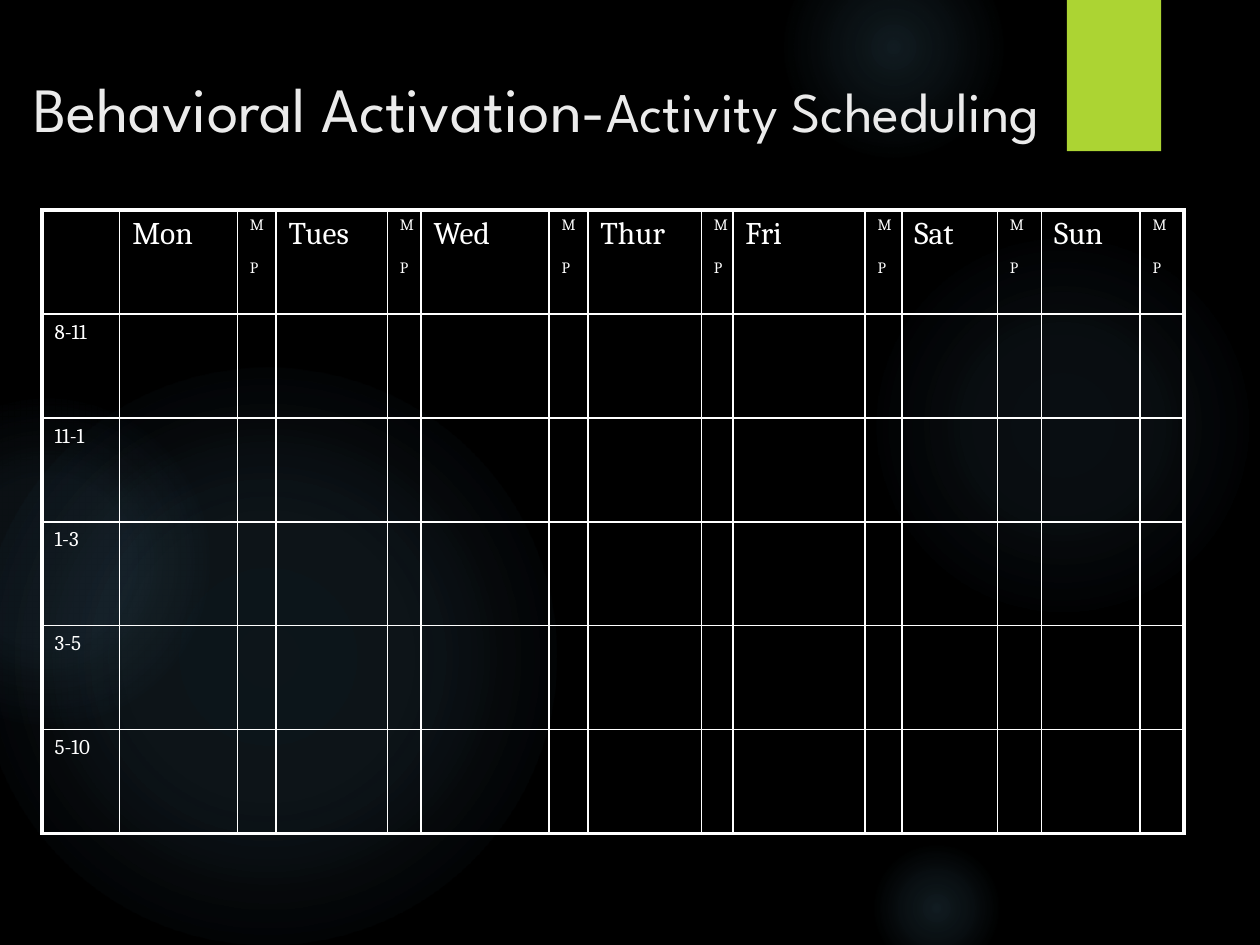
from pptx import Presentation
from pptx.dml.color import RGBColor
from pptx.enum.shapes import MSO_SHAPE
from pptx.enum.text import MSO_ANCHOR
from pptx.oxml import parse_xml
from pptx.oxml.ns import nsdecls, qn
from pptx.util import Inches, Pt

BLACK = RGBColor(0x00, 0x00, 0x00)
WHITE = RGBColor(0xFF, 0xFF, 0xFF)
PALE = RGBColor(0xEB, 0xEB, 0xEB)
LIME = RGBColor(0xAC, 0xD4, 0x33)
SKY = RGBColor(0x7A, 0xC4, 0xF0)

UNIT = Inches(1) / 12
PAGE_COLUMNS, PAGE_ROWS = 120, 90

GLOWS = [
    ((82.7, 22, 37, 37), [(0, 7), (36, 6), (69, 0)]),
    ((74.6, -6, 21, 21), [(0, 14), (36, 7), (73, 0)]),
    ((82.7, 80, 13, 13), [(0, 14), (36, 7), (66, 0)]),
    ((-2, 35, 55, 55), [(0, 11), (36, 10), (75, 0)]),
    ((-11, 38, 31, 31), [(0, 8), (36, 8), (72, 0)]),
]
DAYS = ["Mon", "Tues", "Wed", "Thur", "Fri", "Sat", "Sun"]
HOURS = ["8-11", "11-1", "1-3", "3-5", "5-10"]
HOUR_COLUMN = 7.4
DAY_COLUMNS = [11.2, 10.6, 12.2, 10.8, 12.6, 9.1, 9.4]
RATING_COLUMNS = [3.7, 3.2, 3.7, 3.0, 3.5, 4.2, 4.2]
TABLE_ROW = 9.9
THICK, THIN = 2.25, 1

DAY_FORMAT = {"name": "Cambria", "size": Pt(18)}
RATING_FORMAT = {"name": "Cambria", "size": Pt(9)}
HOUR_FORMAT = {"name": "Cambria", "size": Pt(12)}


def grid(*counts):
    """Turn counts of grid columns or rows into lengths."""
    return [round(count * UNIT) for count in counts]


def format_font(font, color, values):
    """Give a font its colour and the attributes listed in values."""
    font.color.rgb = color
    for name, value in values.items():
        setattr(font, name, value)


def add_plain_shape(page, kind, box):
    """Add a preset shape without outline or shadow."""
    shape = page.shapes.add_shape(kind, *grid(*box))
    shape.shadow.inherit = False
    shape.line.fill.background()
    return shape


def add_glow(page, box, stops):
    """Add a circle that fades from its centre outwards."""
    shape = add_plain_shape(page, MSO_SHAPE.OVAL, box)
    shape.fill.background()
    stop_list = "".join(
        f'<a:gs pos="{place * 1000}"><a:srgbClr val="{SKY}">'
        f'<a:alpha val="{opacity * 1000}"/></a:srgbClr></a:gs>'
        for place, opacity in stops
    )
    gradient = parse_xml(
        f'<a:gradFill {nsdecls("a")} rotWithShape="1"><a:gsLst>{stop_list}</a:gsLst>'
        '<a:path path="circle"><a:fillToRect l="50000" t="50000" r="50000" b="50000"/>'
        "</a:path></a:gradFill>"
    )
    properties = shape._element.spPr
    properties.replace(properties.find(qn("a:noFill")), gradient)


def add_tab(page, box):
    """Add the lime tab with its soft shadow at the top edge."""
    shape = add_plain_shape(page, MSO_SHAPE.RECTANGLE, box)
    shape.fill.solid()
    shape.fill.fore_color.rgb = LIME
    shape._element.spPr.find(qn("a:effectLst")).append(parse_xml(
        f'<a:outerShdw {nsdecls("a")} blurRad="{Pt(3)}" dist="{Pt(2)}" dir="5400000">'
        f'<a:srgbClr val="{BLACK}"><a:alpha val="45000"/></a:srgbClr></a:outerShdw>'
    ))


def add_title(page, box):
    """Add the heading, whose second part is set smaller."""
    frame = page.shapes.add_textbox(*grid(*box)).text_frame
    frame.word_wrap = True
    frame.vertical_anchor = MSO_ANCHOR.TOP
    para = frame.paragraphs[0]
    for text, size in [("Behavioral Activation-", 36), ("Activity Scheduling", 32)]:
        span = para.add_run()
        span.text = text
        format_font(span.font, PALE, {"name": "League Spartan", "size": Pt(size)})


def write_cell(cell, lines, values, gap=None):
    """Write one paragraph per line, with a gap before all but the first."""
    frame = cell.text_frame
    frame.text = "\n".join(lines)
    for index, para in enumerate(frame.paragraphs):
        para.space_before = gap if index and gap else round(values["size"] * 0.2)
        format_font(para.runs[0].font, WHITE, values)


def draw_borders(cell, widths):
    """Draw the cell's white borders from a dict of side and width."""
    cell.fill.background()
    properties = cell._tc.get_or_add_tcPr()
    for index, (side, width) in enumerate(widths.items()):
        properties.insert(index, parse_xml(
            f'<a:ln{side} {nsdecls("a")} w="{Pt(width)}"><a:solidFill>'
            f'<a:srgbClr val="{WHITE}"/></a:solidFill></a:ln{side}>'
        ))


def add_schedule(page, left, top):
    """Add the weekly table of days, ratings and hours."""
    pairs = zip(DAY_COLUMNS, RATING_COLUMNS)
    columns = [HOUR_COLUMN] + [width for pair in pairs for width in pair]
    row_count, column_count = len(HOURS) + 1, len(columns)
    box = grid(left, top, sum(columns), TABLE_ROW * row_count)
    table = page.shapes.add_table(row_count, column_count, *box).table
    table.first_row = table.horz_banding = False
    for column, width in zip(table.columns, grid(*columns)):
        column.width = width
    for row_index, row in enumerate(table.rows):
        row.height = grid(TABLE_ROW)[0]
        for column_index, cell in enumerate(row.cells):
            outer = {
                "L": column_index == 0,
                "R": column_index == column_count - 1,
                "T": row_index == 0,
                "B": row_index == row_count - 1,
            }
            draw_borders(cell, {side: THICK if edge else THIN for side, edge in outer.items()})
    for index, day in enumerate(DAYS):
        write_cell(table.cell(0, 2 * index + 1), [day], DAY_FORMAT)
        write_cell(table.cell(0, 2 * index + 2), ["M", "P"], RATING_FORMAT, Pt(14))
    for index, hours in enumerate(HOURS, start=1):
        write_cell(table.cell(index, 0), [hours], HOUR_FORMAT)


def main():
    """Build the activity scheduling slide."""
    deck = Presentation()
    deck.slide_width, deck.slide_height = grid(PAGE_COLUMNS, PAGE_ROWS)
    page = deck.slides.add_slide(deck.slide_layouts[6])
    page.background.fill.solid()
    page.background.fill.fore_color.rgb = BLACK
    for box, stops in GLOWS:
        add_glow(page, box, stops)
    add_tab(page, (101.6, 0, 9, 14.4))
    add_title(page, (2, 6, 116, 18.4))
    add_schedule(page, 4, 20)
    deck.save("out.pptx")


if __name__ == "__main__":
    main()
